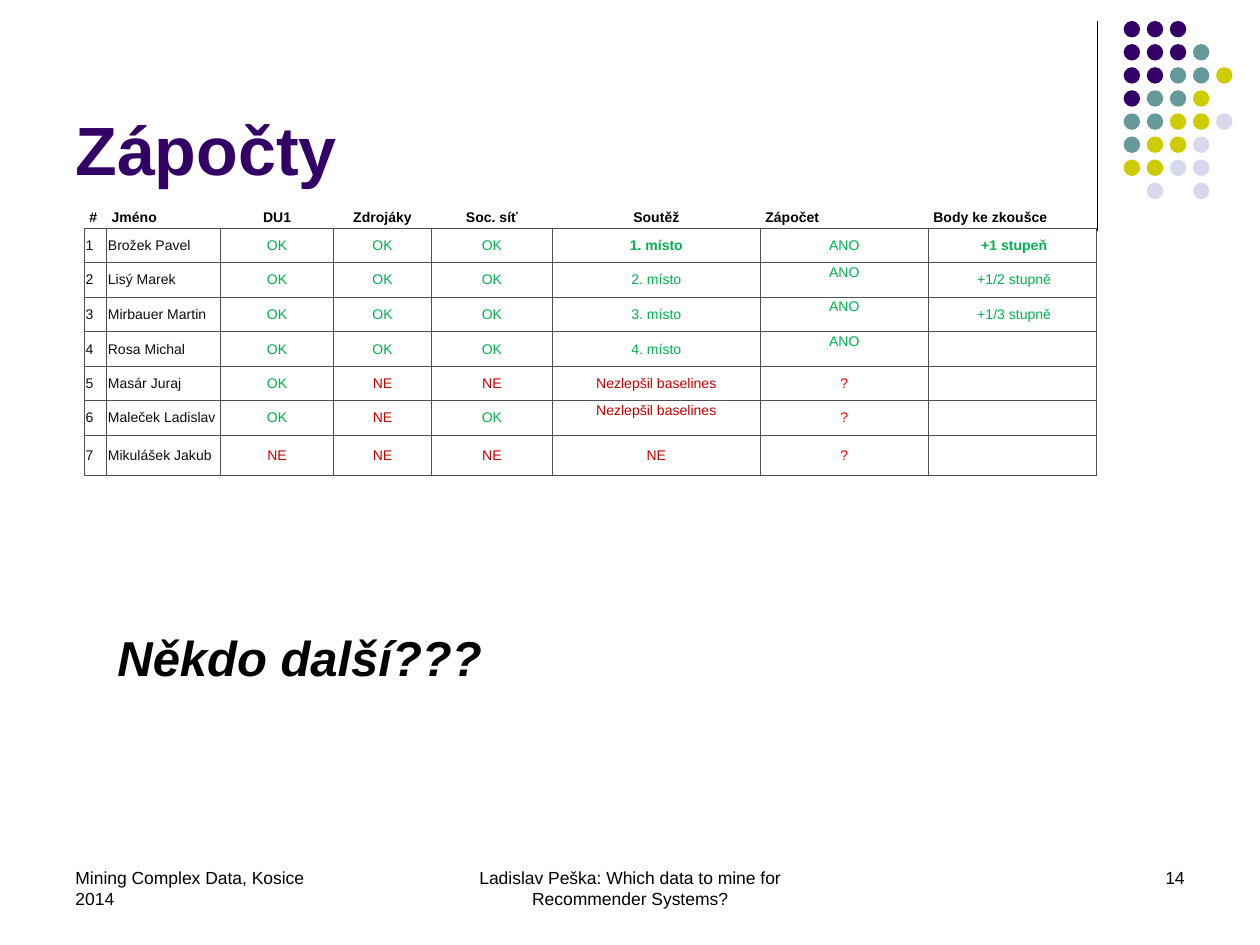
from dataclasses import dataclass

from lxml.etree import SubElement
from pptx import Presentation
from pptx.dml.color import RGBColor
from pptx.enum.shapes import MSO_CONNECTOR as Connector, MSO_SHAPE as Shape
from pptx.enum.text import MSO_ANCHOR as Anchor, PP_ALIGN as Align
from pptx.oxml.ns import qn
from pptx.util import Pt


@dataclass(frozen=True)
class Theme:
    font: str = "Arial"
    purple: str = "330066"
    teal: str = "669999"
    lime: str = "CCCC00"
    lavender: str = "D8D8EC"
    black: str = "000000"
    ink: str = "0D0D0D"
    green: str = "00B050"
    dark_red: str = "C00000"
    red: str = "FF0000"
    border: str = "505050"
    title_size: float = 39
    remark_size: float = 28
    footer_size: float = 10
    table_size: int = 8
    hairline: float = 0.75


class SlideBuilder:
    def __init__(self, slide, theme):
        self.slide = slide
        self.theme = theme

    def add_span(self, para, text, size, color, align=Align.LEFT, **formats):
        para.alignment = align
        span = para.add_run()
        span.text = text
        span.font.color.rgb = RGBColor.from_string(color)
        values = {"name": self.theme.font, "size": Pt(size), **formats}
        for name, value in values.items():
            setattr(span.font, name, value)

    def text(self, area, text, size, color, align=Align.LEFT,
             anchor=Anchor.TOP, wrap=True, **formats):
        box = self.slide.shapes.add_textbox(*map(Pt, area))
        frame = box.text_frame
        for name, value in {"word_wrap": wrap, "vertical_anchor": anchor}.items():
            setattr(frame, name, value)
        self.add_span(frame.paragraphs[0], text, size, color, align, **formats)

    def line(self, start, end, color):
        rule = self.slide.shapes.add_connector(
            Connector.STRAIGHT, *map(Pt, (*start, *end)))
        rule.line.color.rgb = RGBColor.from_string(color)
        rule.line.width = Pt(self.theme.hairline)
        SubElement(rule._element.spPr, qn("a:effectLst"))

    def dot(self, left, top, size, color):
        dot = self.slide.shapes.add_shape(Shape.OVAL, *map(Pt, (left, top, size, size)))
        dot.shadow.inherit = False
        dot.fill.solid()
        dot.fill.fore_color.rgb = RGBColor.from_string(color)
        dot.line.fill.background()

    def dots(self, left, top, size, pitch, pattern, colors):
        for row, marks in enumerate(pattern):
            for column, mark in enumerate(marks):
                if mark in colors:
                    self.dot(left + column * pitch, top + row * pitch, size, colors[mark])

    def borders(self, cell, visible):
        properties = cell._tc.get_or_add_tcPr()
        for side in "LRTB":
            edge = SubElement(properties, qn(f"a:ln{side}"),
                              w=str(Pt(self.theme.hairline)))
            if side in visible:
                fill = SubElement(edge, qn("a:solidFill"))
                SubElement(fill, qn("a:srgbClr"), val=self.theme.border)
            else:
                SubElement(edge, qn("a:noFill"))

    def cell(self, cell, text, color, align, sides, margins, **formats):
        self.borders(cell, sides)
        cell.fill.background()
        cell.vertical_anchor = Anchor.MIDDLE
        for name, value in margins.items():
            setattr(cell, f"margin_{name}", Pt(value))
        para = cell.text_frame.paragraphs[0]
        if text:
            self.add_span(para, text, self.theme.table_size, color, align, **formats)
        else:
            SubElement(para._p, qn("a:endParaRPr"), sz=str(self.theme.table_size * 100))

    def table(self, left, top, widths, heights):
        frame = self.slide.shapes.add_table(
            len(heights), len(widths),
            *map(Pt, (left, top, sum(widths), sum(heights))))
        table = frame.table
        for name in ("first_row", "horz_banding"):
            setattr(table, name, False)
        for column, width in zip(table.columns, widths):
            column.width = Pt(width)
        for row, height in zip(table.rows, heights):
            row.height = Pt(height)
        return table


HEADERS = ["#", "Jméno", "DU1", "Zdrojáky", "Soc. síť", "Soutěž",
           "Zápočet", "Body ke zkoušce"]
RESULTS = [
    ["Brožek Pavel", "OK", "OK", "OK", "1. místo", "ANO", " +1 stupeň"],
    ["Lisý Marek", "OK", "OK", "OK", "2. místo", "ANO", " +1/2 stupně"],
    ["Mirbauer Martin", "OK", "OK", "OK", "3. místo", "ANO", " +1/3 stupně"],
    ["Rosa Michal", "OK", "OK", "OK", "4. místo", "ANO", ""],
    ["Masár Juraj", "OK", "NE", "NE", "Nezlepšil baselines", "?", ""],
    ["Maleček Ladislav", "OK", "NE", "OK", "Nezlepšil baselines", "?", ""],
    ["Mikulášek Jakub", "NE", "NE", "NE", "NE", "?", ""],
]
DOT_PATTERN = ["PPP", "PPPT", "PPTTL", "PTTL", "TTLLV", "TLLV", "LLVV", " V V"]
RAISED_CELLS = {(2, 6), (3, 6), (4, 6), (6, 5)}
BOLD_CELLS = {(1, 5), (1, 7)}


def result_color(theme, text, column):
    if column < 2:
        return theme.ink
    special = {"?": theme.red, "NE": theme.dark_red,
               "Nezlepšil baselines": theme.dark_red}
    return special.get(text, theme.green)


def add_results(builder):
    theme = builder.theme
    widths = [12.7, 65.1, 64.6, 56, 69.1, 118.8, 96, 96]
    table = builder.table(48.24, 118.1, widths, [12.5] + [19.5] * 6 + [23.1])
    header_margins = {"left": 2.88, "right": 2.88, "top": 1.44, "bottom": 1.44}
    body_margins = dict.fromkeys(header_margins, 0.72)
    for column, text in enumerate(HEADERS):
        align = Align.CENTER if 2 <= column <= 5 else Align.LEFT
        builder.cell(table.cell(0, column), text, theme.black, align, "B",
                     header_margins, bold=True)
    for row, result in enumerate(RESULTS, 1):
        for column, text in enumerate([str(row), *result]):
            align = Align.LEFT if column < 2 else Align.CENTER
            raised = {"bottom": 9.5} if (row, column) in RAISED_CELLS else {}
            builder.cell(table.cell(row, column), text,
                         result_color(theme, text, column), align, "LRTB",
                         body_margins | raised, bold=(row, column) in BOLD_CELLS)


def main():
    theme = Theme()
    deck = Presentation()
    deck.slide_width, deck.slide_height = Pt(720), Pt(540)
    page = deck.slides.add_slide(deck.slide_layouts[6])
    builder = SlideBuilder(page, theme)

    builder.line((627, 12), (627, 132), theme.black)
    builder.dots(642.1, 12, 9.4, 13.2, DOT_PATTERN,
                 {"P": theme.purple, "T": theme.teal,
                  "L": theme.lime, "V": theme.lavender})
    builder.text((36, 9.5, 594, 102), "Zápočty", theme.title_size, theme.purple,
                 anchor=Anchor.BOTTOM, bold=True)
    footers = [
        (36, 168, "Mining Complex Data, Kosice 2014", Align.LEFT),
        (246, 228, "Ladislav Peška: Which data to mine for Recommender Systems?",
         Align.CENTER),
        (516, 168, "14", Align.RIGHT),
    ]
    for left, width, text, align in footers:
        builder.text((left, 492, width, 36), text, theme.footer_size, theme.black, align)
    add_results(builder)
    builder.text((60, 355, 225.5, 41), "Někdo další???", theme.remark_size,
                 theme.black, wrap=False, bold=True, italic=True)
    deck.save("out.pptx")


if __name__ == "__main__":
    main()
